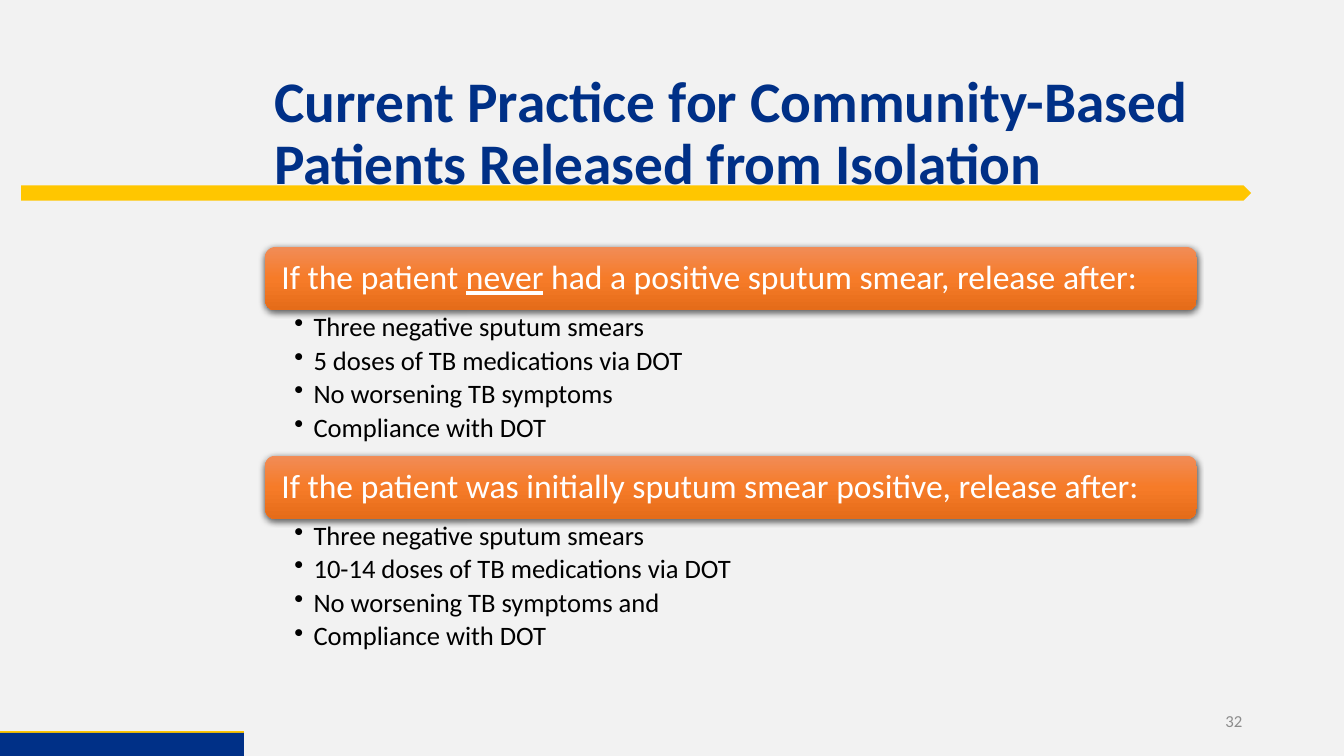
from lxml.etree import SubElement
from pptx import Presentation
from pptx.dml.color import RGBColor
from pptx.enum.shapes import MSO_CONNECTOR, MSO_SHAPE
from pptx.enum.text import MSO_ANCHOR, PP_ALIGN
from pptx.oxml.ns import qn
from pptx.util import Inches, Pt

COLORS = {
    "background": "F2F2F2", "navy": "003087", "gold": "FFC600",
    "number": "8C8C8C", "white": "FFFFFF", "black": "000000",
    "orange_top": "F18C57", "orange_middle": "F67B28", "orange_bottom": "E56C19",
}
HEADING_GRADIENT = [(0, "orange_top"), (50, "orange_middle"), (100, "orange_bottom")]
FONT = "Calibri"

LEFT, WIDTH = 2.63, 9.24
FIRST_TOP, HEADING_HEIGHT, BULLETS_HEIGHT = 2.45, 0.63, 1.44

# Heading runs are (text, underlined) pairs.
SECTIONS = [
    (
        [("If the patient ", False), ("never", True),
         (" had a positive sputum smear, release after:", False)],
        ["Three negative sputum smears", "5 doses of TB medications via DOT",
         "No worsening TB symptoms", "Compliance with DOT"],
    ),
    (
        [("If the patient was initially sputum smear positive, release after:", False)],
        ["Three negative sputum smears", "10-14 doses of TB medications via DOT",
         "No worsening TB symptoms and", "Compliance with DOT"],
    ),
]


def rgb(name):
    return RGBColor.from_string(COLORS[name])


def set_attributes(target, values):
    for name, value in values.items():
        setattr(target, name, value)


def format_font(font, size, color, bold=False):
    set_attributes(font, {"name": FONT, "size": Pt(size), "bold": bold})
    font.color.rgb = rgb(color)


def format_frame(frame, anchor, insets=(0.1, 0.05, 0.1, 0.05)):
    """Set anchor, wrapping and the left, top, right and bottom insets."""
    left, top, right, bottom = map(Inches, insets)
    set_attributes(frame, {
        "word_wrap": True, "vertical_anchor": anchor,
        "margin_left": left, "margin_top": top,
        "margin_right": right, "margin_bottom": bottom,
    })


def add_bar(slide, kind, box, color):
    shape = slide.shapes.add_shape(kind, *map(Inches, box))
    shape.shadow.inherit = False
    shape.fill.solid()
    shape.fill.fore_color.rgb = rgb(color)
    shape.line.fill.background()


def add_line(slide, start, end, color, width):
    line = slide.shapes.add_connector(MSO_CONNECTOR.STRAIGHT, *map(Inches, start + end))
    line.line.color.rgb = rgb(color)
    line.line.width = Pt(width)
    SubElement(line._element.spPr, qn("a:effectLst"))


def add_text(slide, box, text, size, color, bold=False, **paragraph_format):
    frame = slide.shapes.add_textbox(*map(Inches, box)).text_frame
    format_frame(frame, MSO_ANCHOR.MIDDLE)
    paragraph = frame.paragraphs[0]
    paragraph.text = text
    set_attributes(paragraph, paragraph_format)
    format_font(paragraph.runs[0].font, size, color, bold)


def add_color(parent, color):
    return SubElement(parent, qn("a:srgbClr"), val=COLORS[color])


def fill_gradient(shape, stops):
    """Fill from top to bottom with (percent, color) stops."""
    shape.fill.gradient()
    shape.fill.gradient_angle = 270
    stop_list = shape._element.spPr.find(qn("a:gradFill")).find(qn("a:gsLst"))
    for stop in list(stop_list):
        stop_list.remove(stop)
    for percent, color in stops:
        add_color(SubElement(stop_list, qn("a:gs"), pos=str(percent * 1000)), color)


def add_soft_shadow(shape):
    shape.shadow.inherit = False
    effects = shape._element.spPr.find(qn("a:effectLst"))
    shadow = SubElement(effects, qn("a:outerShdw"), blurRad=str(Pt(4.5)),
                        dist=str(Pt(1.5)), dir="5400000", algn="ctr", rotWithShape="0")
    SubElement(add_color(shadow, "black"), qn("a:alpha"), val="63000")


def add_heading(slide, top, runs):
    shape = slide.shapes.add_shape(
        MSO_SHAPE.ROUNDED_RECTANGLE, *map(Inches, (LEFT, top, WIDTH, HEADING_HEIGHT)))
    fill_gradient(shape, HEADING_GRADIENT)
    shape.line.fill.background()
    add_soft_shadow(shape)
    format_frame(shape.text_frame, MSO_ANCHOR.MIDDLE, (0.13, 0.1, 0.13, 0.1))
    paragraph = shape.text_frame.paragraphs[0]
    set_attributes(paragraph, {"alignment": PP_ALIGN.LEFT, "line_spacing": 0.9})
    for text, underlined in runs:
        run = paragraph.add_run()
        run.text = text
        format_font(run.font, 24, "white")
        run.font.underline = underlined


def add_bullets(slide, top, items):
    box = slide.shapes.add_textbox(*map(Inches, (LEFT, top, WIDTH, BULLETS_HEIGHT)))
    frame = box.text_frame
    format_frame(frame, MSO_ANCHOR.TOP, (0.29, 0.03, 0.19, 0.03))
    for index, item in enumerate(items):
        paragraph = frame.add_paragraph() if index else frame.paragraphs[0]
        properties = paragraph._p.get_or_add_pPr()
        properties.set("marL", str(Inches(0.19)))
        properties.set("indent", str(Inches(-0.19)))
        SubElement(properties, qn("a:buChar"), char="•")
        set_attributes(paragraph, {
            "text": item, "level": 1, "line_spacing": 0.9, "space_after": Pt(3.5)})
        format_font(paragraph.runs[0].font, 19, "black")


def main():
    presentation = Presentation()
    presentation.slide_width = Inches(13.33)
    presentation.slide_height = Inches(7.5)
    slide = presentation.slides.add_slide(presentation.slide_layouts[6])
    slide.background.fill.solid()
    slide.background.fill.fore_color.rgb = rgb("background")

    add_bar(slide, MSO_SHAPE.PENTAGON, (0.21, 1.84, 12.2, 0.15), "gold")
    add_line(slide, (0, 7.27), (2.42, 7.27), "gold", 3)
    add_bar(slide, MSO_SHAPE.RECTANGLE, (0, 7.27, 2.42, 0.23), "navy")
    add_text(slide, (9.42, 6.95, 3, 0.4), "32", 12, "number",
             alignment=PP_ALIGN.RIGHT, space_after=Pt(6))
    add_text(slide, (2.62, 0.61, 9.79, 1.45),
             "Current Practice for Community-Based Patients Released from Isolation",
             41, "navy", bold=True, line_spacing=0.9)

    for index, (heading, items) in enumerate(SECTIONS):
        top = FIRST_TOP + index * (HEADING_HEIGHT + BULLETS_HEIGHT)
        add_heading(slide, top, heading)
        add_bullets(slide, top + HEADING_HEIGHT, items)

    presentation.save("out.pptx")


if __name__ == "__main__":
    main()
